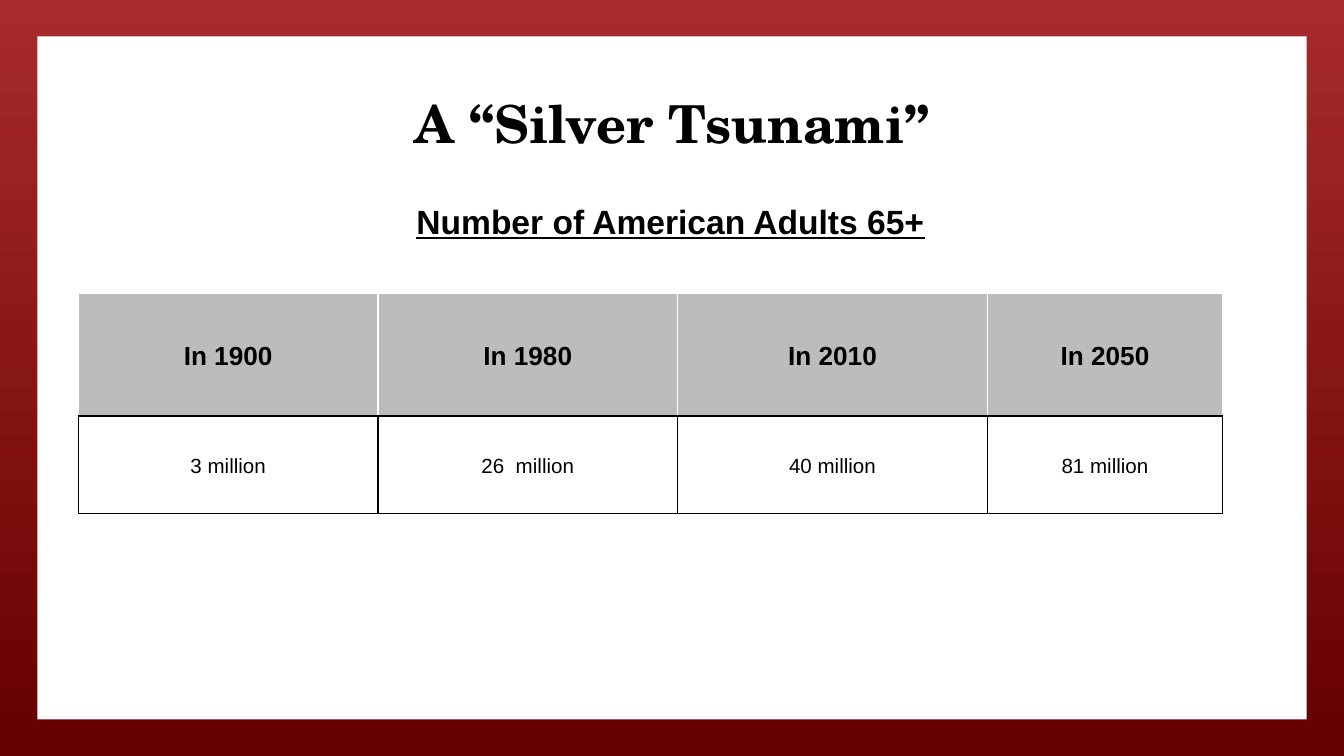
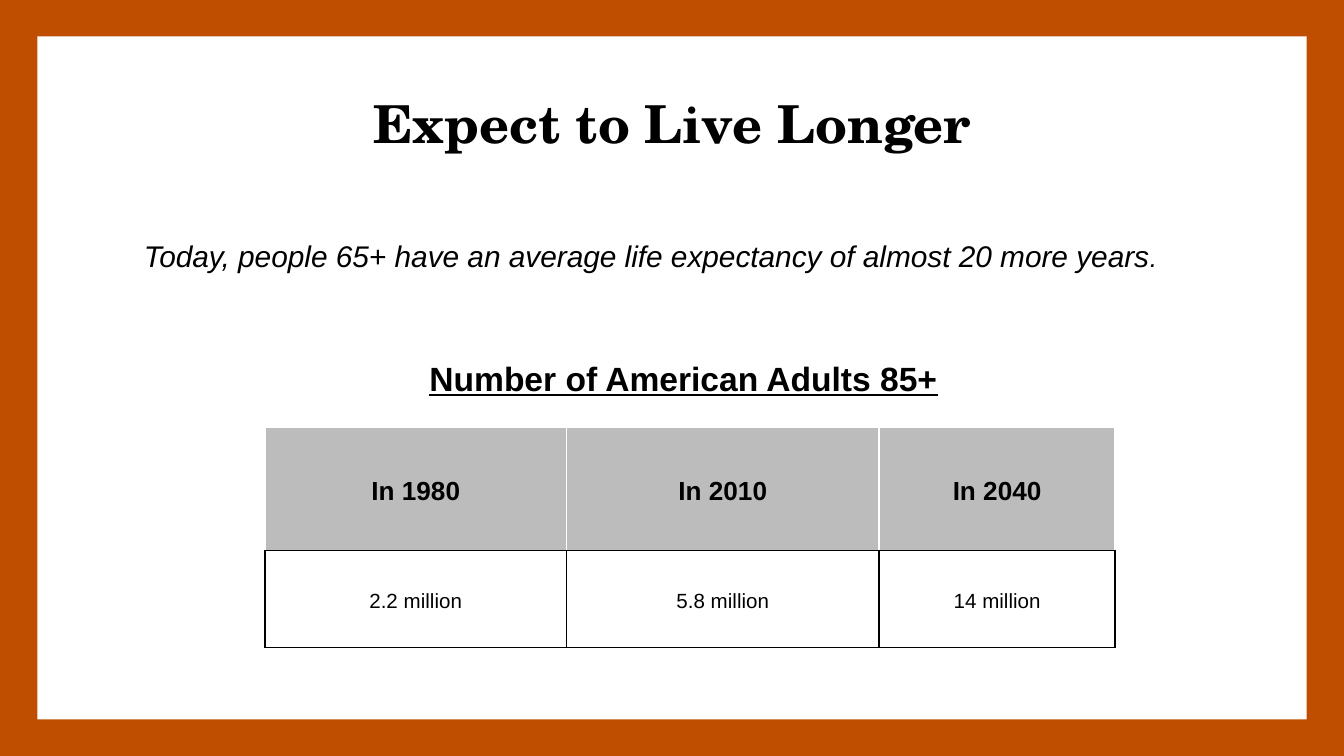
from dataclasses import dataclass

from lxml import etree
from pptx import Presentation
from pptx.dml.color import RGBColor
from pptx.enum.shapes import MSO_SHAPE
from pptx.enum.text import MSO_ANCHOR, MSO_AUTO_SIZE, PP_ALIGN
from pptx.oxml.ns import qn
from pptx.util import Pt

RECTANGLE = MSO_SHAPE.RECTANGLE
MIDDLE = MSO_ANCHOR.MIDDLE
TOP = MSO_ANCHOR.TOP
CENTER = PP_ALIGN.CENTER
LEFT = PP_ALIGN.LEFT
NO_AUTOFIT = MSO_AUTO_SIZE.NONE
TITLE_ONLY = 5


@dataclass(frozen=True)
class Theme:
    ink: str = "000000"
    paper: str = "FFFFFF"
    header: str = "BCBCBC"
    red_top: str = "A82B2B"
    red_bottom: str = "660000"
    orange: str = "C04E00"
    title_font: str = "TeX Gyre Schola"
    body_font: str = "Arial"
    title_size: float = 28
    caption_size: float = 18
    statement_size: float = 16
    header_size: float = 14
    value_size: float = 11


THEME = Theme()
WIDTH, HEIGHT = 720, 405
PANEL = (20, 19.5, 680, 366)
TITLE = (24, 42, 672, 47.5)
ROW_HEIGHTS = (66, 52)


def color(code):
    return RGBColor.from_string(code)


def place(area):
    return [Pt(length) for length in area]


def style_font(font, size, name=THEME.body_font, bold=False, italic=False, underline=False):
    font.name = name
    font.size = Pt(size)
    font.bold = bold
    font.italic = italic
    font.underline = underline
    font.color.rgb = color(THEME.ink)


def set_margins(target, horizontal, vertical):
    target.margin_left = target.margin_right = Pt(horizontal)
    target.margin_top = target.margin_bottom = Pt(vertical)


def add_rectangle(page, area, fills):
    """Fill with one colour, or with a gradient from top to bottom for two."""
    shape = page.shapes.add_shape(RECTANGLE, *place(area))
    shape.shadow.inherit = False
    shape.line.fill.background()
    if len(fills) == 1:
        shape.fill.solid()
        shape.fill.fore_color.rgb = color(fills[0])
    else:
        shape.fill.gradient()
        shape.fill.gradient_angle = 270
        for position, (stop, code) in enumerate(zip(shape.fill.gradient_stops, fills)):
            stop.position = position
            stop.color.rgb = color(code)


def add_page(deck, title, frame_fills):
    page = deck.slides.add_slide(deck.slide_layouts[TITLE_ONLY])
    add_rectangle(page, (0, 0, WIDTH, HEIGHT), frame_fills)
    add_rectangle(page, PANEL, [THEME.paper])

    # The title goes in front of the frame
    box = page.shapes.title
    page.shapes._spTree.append(box._element)
    box.left, box.top, box.width, box.height = place(TITLE)
    frame = box.text_frame
    frame.text = title
    frame.auto_size = NO_AUTOFIT
    frame.vertical_anchor = MIDDLE
    set_margins(frame, 7.2, 7.2)
    para = frame.paragraphs[0]
    para.alignment = CENTER
    style_font(para.font, THEME.title_size, THEME.title_font, bold=True)
    return page


def add_text(page, area, text, size, **style):
    frame = page.shapes.add_textbox(*place(area)).text_frame
    frame.word_wrap = True
    frame.vertical_anchor = TOP
    set_margins(frame, 7.2, 3.6)
    para = frame.paragraphs[0]
    para.text = text
    para.alignment = LEFT
    style_font(para.font, size, **style)
    return para


def add_caption(page, area, text):
    add_text(page, area, text, THEME.caption_size, bold=True, underline=True)


def set_borders(cell, codes):
    properties = cell._tc.get_or_add_tcPr()
    for side, code in zip("LRTB", codes):
        line = etree.SubElement(properties, qn(f"a:ln{side}"), w=str(Pt(1)))
        fill = etree.SubElement(line, qn("a:solidFill"))
        etree.SubElement(fill, qn("a:srgbClr"), val=code)


def fill_cell(cell, text, is_header):
    side = THEME.paper if is_header else THEME.ink
    set_borders(cell, (side, side, side, THEME.ink))
    cell.fill.solid()
    cell.fill.fore_color.rgb = color(THEME.header if is_header else THEME.paper)
    cell.vertical_anchor = MIDDLE
    set_margins(cell, 5, 0)
    cell.text = text
    para = cell.text_frame.paragraphs[0]
    para.alignment = CENTER
    para.line_spacing = 1.15
    size = THEME.header_size if is_header else THEME.value_size
    style_font(para.font, size, bold=is_header)


def add_population_table(page, left, top, widths, rows):
    area = (left, top, sum(widths), sum(ROW_HEIGHTS))
    table = page.shapes.add_table(len(rows), len(widths), *place(area)).table
    table.horz_banding = False
    for column, width in zip(table.columns, widths):
        column.width = Pt(width)
    for index, (row, height, texts) in enumerate(zip(table.rows, ROW_HEIGHTS, rows)):
        row.height = Pt(height)
        for cell, text in zip(row.cells, texts):
            fill_cell(cell, text, is_header=index == 0)


def build_silver_tsunami(deck):
    page = add_page(deck, "A “Silver Tsunami”", [THEME.red_top, THEME.red_bottom])
    add_population_table(page, 42, 157, (160.5, 160.5, 166, 126), [
        ("In 1900", "In 1980", "In 2010", "In 2050"),
        ("3 million", "26  million", "40 million", "81 million"),
    ])
    add_caption(page, (216, 104, 289, 29), "Number of American Adults 65+")


def build_live_longer(deck):
    page = add_page(deck, "Expect to Live Longer", [THEME.orange])
    add_population_table(page, 142, 229, (161.5, 167.5, 126.5), [
        ("In 1980", "In 2010", "In 2040"),
        ("2.2 million", "5.8 million", "14 million"),
    ])
    add_caption(page, (223, 188, 293, 29), "Number of American Adults 85+")

    # The closing period is slightly smaller than the sentence
    sentence = "Today, people 65+ have an average life expectancy of almost 20 more years"
    para = add_text(page, (70, 124, 580, 27), sentence, THEME.statement_size, italic=True)
    span = para.add_run()
    span.text = "."
    span.font.size = Pt(THEME.header_size)


def main():
    deck = Presentation()
    deck.slide_width, deck.slide_height = Pt(WIDTH), Pt(HEIGHT)
    build_silver_tsunami(deck)
    build_live_longer(deck)
    deck.save("out.pptx")


if __name__ == "__main__":
    main()
